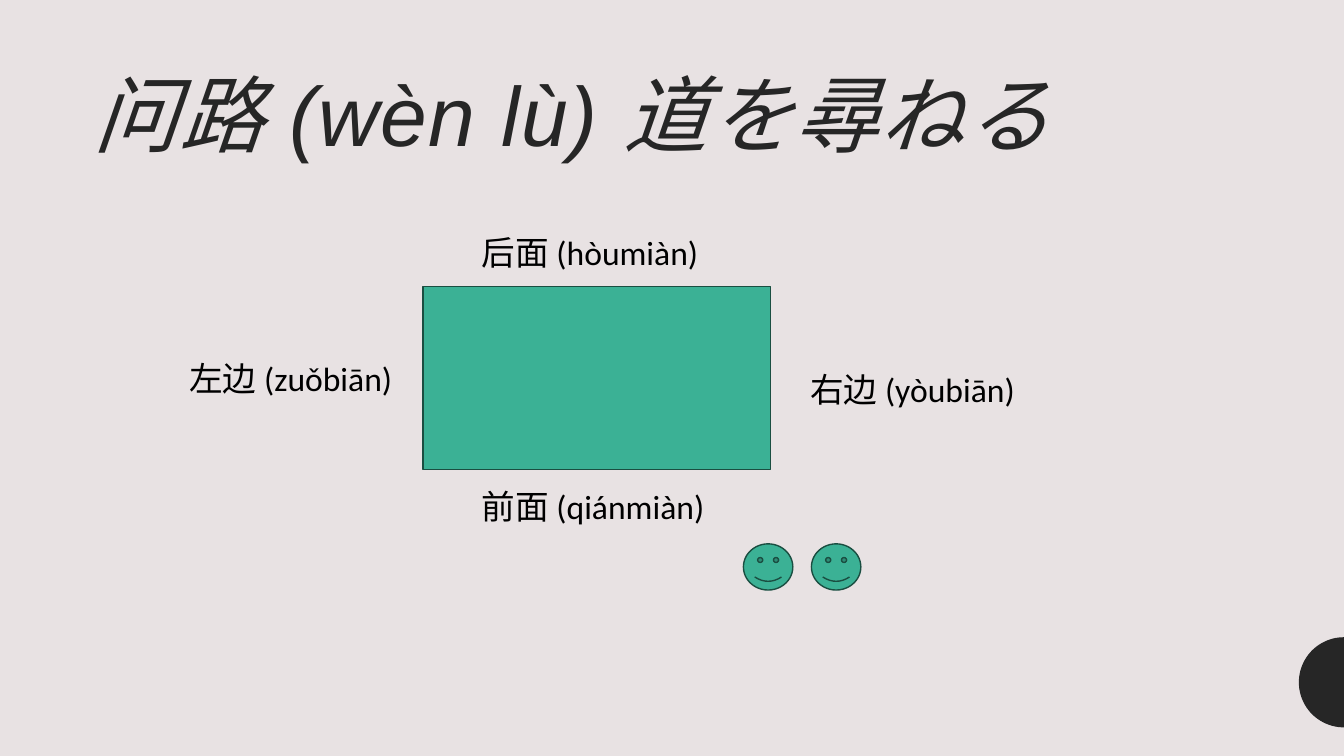
import math

from lxml import etree
from pptx import Presentation
from pptx.dml.color import RGBColor
from pptx.enum import shapes as kinds, text as text_enums
from pptx.util import Pt

BACKGROUND = RGBColor(0xE8, 0xE2, 0xE3)
DARK = RGBColor(0x26, 0x26, 0x26)
GREEN = RGBColor(0x3B, 0xB1, 0x95)
GREEN_EDGE = RGBColor(0x1A, 0x4E, 0x41)
BLACK = RGBColor(0, 0, 0)

SLIDE_WIDTH, SLIDE_HEIGHT = 960, 540
LABEL_HEIGHT = 36

# Text, left, top, width
LABELS = [
    ("前面 (qiánmiàn)", 337, 343.4, 210),
    ("后面 (hòumiàn)", 337, 162, 194),
    ("左边 (zuǒbiān)", 128.2, 252, 186.5),
    ("右边 (yòubiān)", 571.7, 260, 214),
]


def add_text(slide, content, left, top, width, height, *, size, font="Calibri",
             color=BLACK, italic=False, spacing=None, line_spacing=None,
             anchor=text_enums.MSO_ANCHOR.TOP):
    box = slide.shapes.add_textbox(Pt(left), Pt(top), Pt(width), Pt(height))
    frame = box.text_frame
    frame.word_wrap = True
    frame.vertical_anchor = anchor
    paragraph = frame.paragraphs[0]
    paragraph.line_spacing = line_spacing
    run = paragraph.add_run()
    run.text = content
    run.font.size = Pt(size)
    run.font.name = font
    run.font.italic = italic
    run.font.color.rgb = color
    properties = run.font._element
    if spacing is not None:
        properties.set("spc", str(spacing * 100))
    # Chinese and Japanese characters follow the same font name
    latin = properties.find("{*}latin")
    east_asian = etree.Element(latin.tag.replace("latin", "ea"), typeface=font)
    latin.addnext(east_asian)


def add_green_shape(slide, kind, left, top, width, height):
    shape = slide.shapes.add_shape(kind, Pt(left), Pt(top), Pt(width), Pt(height))
    shape.shadow.inherit = False
    shape.fill.solid()
    shape.fill.fore_color.rgb = GREEN
    shape.line.color.rgb = GREEN_EDGE
    shape.line.width = Pt(1)


def add_edge_half_circle(slide, center_y, radius, steps=48):
    """Half circle whose flat side lies on the right edge of the slide."""
    angles = [math.pi * step / steps for step in range(steps + 1)]
    points = [(Pt(SLIDE_WIDTH - radius * math.sin(angle)),
               Pt(center_y - radius * math.cos(angle))) for angle in angles]
    builder = slide.shapes.build_freeform(*points[0])
    builder.add_line_segments(points[1:], close=True)
    shape = builder.convert_to_shape()
    shape.shadow.inherit = False
    shape.fill.solid()
    shape.fill.fore_color.rgb = DARK
    shape.line.fill.background()


def main():
    presentation = Presentation()
    presentation.slide_width = Pt(SLIDE_WIDTH)
    presentation.slide_height = Pt(SLIDE_HEIGHT)
    slide = presentation.slides.add_slide(presentation.slide_layouts[6])
    slide.background.fill.solid()
    slide.background.fill.fore_color.rgb = BACKGROUND

    # Edge decoration and title
    add_edge_half_circle(slide, center_y=487.4, radius=32.2)
    add_text(slide, "问路 (wèn lù) 道を尋ねる", 60, 43.2, 726, 83.5, size=60,
             font="Arial", color=DARK, italic=True, spacing=1, line_spacing=0.9,
             anchor=text_enums.MSO_ANCHOR.MIDDLE)

    # Building and the two people in front of it
    add_green_shape(slide, kinds.MSO_SHAPE.RECTANGLE, 302.2, 204.8, 248.4, 130.4)
    for person in range(2):
        add_green_shape(slide, kinds.MSO_SHAPE.SMILEY_FACE,
                        531 + 48.6 * person, 388.5, 35.3, 33)

    # Directions around the building
    for content, left, top, width in LABELS:
        add_text(slide, content, left, top, width, LABEL_HEIGHT, size=24)

    presentation.save("out.pptx")


if __name__ == "__main__":
    main()
